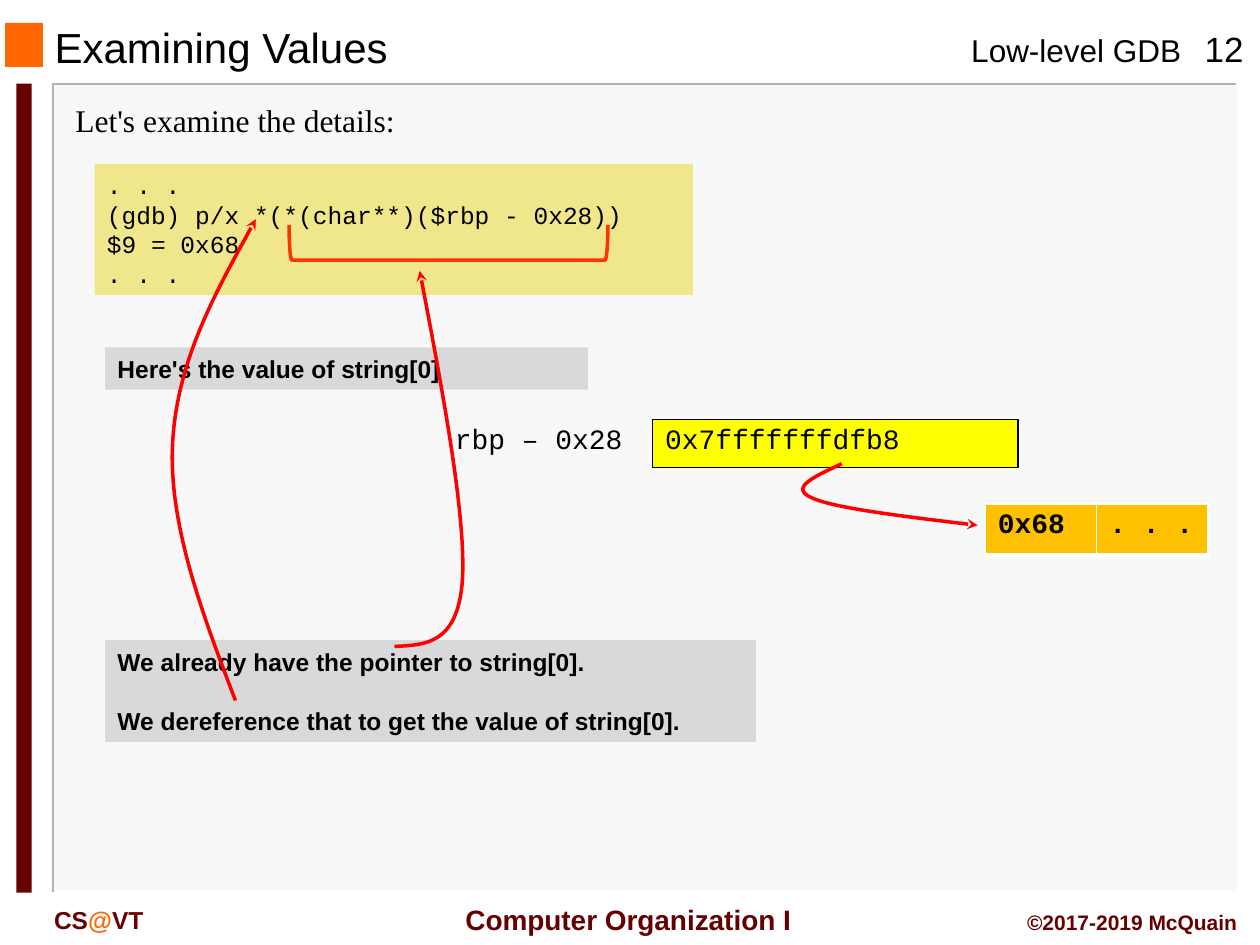
"""Build the "Examining Values" slide on reading memory with GDB."""
from lxml import etree
from pptx import Presentation
from pptx.dml.color import RGBColor
from pptx.enum.shapes import MSO_SHAPE
from pptx.enum.text import MSO_ANCHOR, PP_ALIGN
from pptx.oxml.ns import qn
from pptx.util import Pt

RECTANGLE, BRACKET = MSO_SHAPE.RECTANGLE, MSO_SHAPE.LEFT_BRACKET
TOP, MIDDLE = MSO_ANCHOR.TOP, MSO_ANCHOR.MIDDLE
LEFT, CENTER, RIGHT = PP_ALIGN.LEFT, PP_ALIGN.CENTER, PP_ALIGN.RIGHT

BLACK = RGBColor(0x00, 0x00, 0x00)
WHITE = RGBColor(0xFF, 0xFF, 0xFF)
PANEL_GRAY = RGBColor(0xF8, 0xF8, 0xF8)
EDGE_GRAY = RGBColor(0xB2, 0xB2, 0xB2)
NOTE_GRAY = RGBColor(0xD9, 0xD9, 0xD9)
ORANGE = RGBColor(0xFF, 0x66, 0x00)
MAROON = RGBColor(0x66, 0x00, 0x00)
KHAKI = RGBColor(0xF0, 0xE6, 0x8C)
YELLOW = RGBColor(0xFF, 0xFF, 0x00)
GOLD = RGBColor(0xFF, 0xC0, 0x00)
RED = RGBColor(0xFF, 0x00, 0x00)
BRACKET_RED = RGBColor(0xFF, 0x33, 0x00)

SANS, SERIF, MONO = "Arial", "Times New Roman", "Courier New"
LINE_HEIGHT = Pt(16.9)

TITLE = ("Examining Values", (24, 13, 456, 27.4))
BLOCKS = [
    ((31, 48.2, 676.8, 461.5), PANEL_GRAY),
    ((2.9, 13, 21.6, 25.2), ORANGE),
    ((9.4, 47.8, 8.64, 462.4), MAROON),
]
PANEL_EDGES = [
    ([(706.3, 48.2), (30.2, 48.2), (30.2, 509.8)], EDGE_GRAY),
    ([(707.8, 48.2), (707.8, 509.8), (31.7, 509.8)], WHITE),
]
LABELS = [
    ((547.9, 14.4, 136.1, 28.8), LEFT, TOP, [("Low-level GDB", BLACK)],
     {"size": Pt(18), "name": SANS}),
    ((250.6, 511.9, 212.4, 26.6), CENTER, MIDDLE, [(" Computer Organization I", MAROON)],
     {"size": Pt(16), "name": SANS, "bold": True}),
    ((675.4, 12.2, 48.2, 31), CENTER, TOP, [("12", BLACK)],
     {"size": Pt(20), "name": SANS}),
    ((23.8, 513.4, 108, 23.8), LEFT, TOP, [("CS", MAROON), ("@", ORANGE), ("VT", MAROON)],
     {"size": Pt(14), "name": SANS, "bold": True}),
    ((504, 516.2, 210.2, 21.6), RIGHT, TOP, [("©2017-2019 McQuain", MAROON)],
     {"size": Pt(12), "name": SANS, "bold": True}),
    ((36, 54, 666, 28.8), LEFT, TOP, [("Let's examine the details:", BLACK)],
     {"size": Pt(18), "name": SERIF}),
]
MONO_14 = {"size": Pt(14), "name": MONO}
SANS_14 = {"size": Pt(14), "name": SANS, "bold": True}
NOTES = [
    ((54, 93.6, 342, 74.9), KHAKI, MONO_14, 0,
     [". . .", "(gdb) p/x *(*(char**)($rbp - 0x28))", "$9 = 0x68", ". . ."]),
    ((60, 198.5, 276, 24.2), NOTE_GRAY, SANS_14, 0, ["Here's the value of string[0]"]),
    ((60, 365.8, 372, 58.2), NOTE_GRAY, SANS_14, LINE_HEIGHT,
     ["We already have the pointer to string[0].",
      "We dereference that to get the value of string[0]."]),
]
ALL_BLACK = dict.fromkeys("LRTB", (BLACK, 1))
ALL_WHITE = {**dict.fromkeys("LRT", (WHITE, 1)), "B": (WHITE, 3)}
MEMORY_TABLES = [
    ((252.7, 239.8), 27.4, False,
     [("rbp – 0x28", 120.2, None, {"R": (BLACK, 1)}),
      ("0x7fffffffdfb8", 208.8, YELLOW, ALL_BLACK)]),
    ((563, 288), 29.5, True,
     [("0x68", 63.7, GOLD, ALL_WHITE), (". . .", 63.7, GOLD, ALL_WHITE)]),
]
CURVES = [
    [(481, 265), (465.8, 272.2), (450.7, 278.6), (463.7, 284.4),
     (475.9, 290.2), (517, 295.2), (558.7, 300.2)],
    [(134.6, 400.3), (115.2, 349.9), (96.5, 299.5), (98.6, 254.2),
     (100.8, 208.1), (123.1, 167), (146.2, 125.3)],
    [(225.4, 369.4), (243.4, 368.6), (261.4, 367.9), (264.2, 331.9),
     (266.4, 296.6), (253.4, 225.4), (239.8, 154.8)],
]
BRACKET_BOX = (246.2, 47.5, 20.2, 182.2)


def set_values(target, values):
    for name, value in values.items():
        setattr(target, name, value)


def write(paragraph, runs, font):
    for text, color in runs:
        run = paragraph.add_run()
        run.text = text
        set_values(run.font, font)
        run.font.color.rgb = color


def add_block(slide, box, color):
    block = slide.shapes.add_shape(RECTANGLE, *map(Pt, box))
    block.shadow.inherit = False
    block.fill.solid()
    block.fill.fore_color.rgb = color
    block.line.fill.background()
    return block


def outline(shape, color, width):
    shape.shadow.inherit = False
    shape.fill.background()
    shape.line.color.rgb = color
    shape.line.width = Pt(width)


def add_polyline(slide, points, color, width):
    corners = [(Pt(x), Pt(y)) for x, y in points]
    builder = slide.shapes.build_freeform(*corners[0])
    builder.add_line_segments(corners[1:], close=False)
    polyline = builder.convert_to_shape()
    outline(polyline, color, width)
    return polyline


def add_curved_arrow(slide, points):
    arrow = add_polyline(slide, points[::3], RED, 2)
    segments = list(arrow._element.iter(qn("a:lnTo")))
    for index, segment in enumerate(segments):
        segment.tag = qn("a:cubicBezTo")
        segment.clear()
        for x, y in points[3 * index + 1:3 * index + 4]:
            etree.SubElement(segment, qn("a:pt"), x=str(Pt(x) - arrow.left),
                             y=str(Pt(y) - arrow.top))
    etree.SubElement(arrow.line._get_or_add_ln(), qn("a:tailEnd"), type="stealth")


def set_borders(cell, borders):
    properties = cell._tc.get_or_add_tcPr()
    for side in "LRTB":
        color, width = borders.get(side, (None, 0))
        edge = etree.SubElement(properties, qn(f"a:ln{side}"), w=str(Pt(width)))
        if color is None:
            etree.SubElement(edge, qn("a:noFill"))
        else:
            fill = etree.SubElement(edge, qn("a:solidFill"))
            etree.SubElement(fill, qn("a:srgbClr"), val=str(color))


def add_memory_table(slide, corner, height, bold, cells):
    width = sum(cell[1] for cell in cells)
    table = slide.shapes.add_table(1, len(cells), *map(Pt, (*corner, width, height))).table
    table.first_row = table.horz_banding = False
    for index, (text, column_width, color, borders) in enumerate(cells):
        table.columns[index].width = Pt(column_width)
        cell = table.cell(0, index)
        set_borders(cell, borders)
        if color is None:
            cell.fill.background()
        else:
            cell.fill.solid()
            cell.fill.fore_color.rgb = color
        write(cell.text_frame.paragraphs[0], [(text, BLACK)],
              {"size": Pt(16), "name": MONO, "bold": bold})


def add_note(slide, box, color, font, gap, lines):
    frame = add_block(slide, box, color).text_frame
    set_values(frame, {"word_wrap": True, "vertical_anchor": TOP})
    for index, line in enumerate(lines):
        paragraph = frame.add_paragraph() if index else frame.paragraphs[0]
        set_values(paragraph, {"alignment": LEFT, "line_spacing": LINE_HEIGHT,
                               "space_before": gap if index else 0})
        write(paragraph, [(line, BLACK)], font)


def add_label(slide, box, alignment, anchor, runs, font):
    frame = slide.shapes.add_textbox(*map(Pt, box)).text_frame
    set_values(frame, {"word_wrap": True, "vertical_anchor": anchor})
    frame.paragraphs[0].alignment = alignment
    write(frame.paragraphs[0], runs, font)


def main():
    deck = Presentation()
    set_values(deck, {"slide_width": Pt(720), "slide_height": Pt(540)})
    slide = deck.slides.add_slide(deck.slide_layouts[5])
    heading, heading_box = TITLE
    title = slide.shapes.title
    set_values(title, dict(zip(("left", "top", "width", "height"), map(Pt, heading_box))))
    title.text_frame.vertical_anchor = MIDDLE
    title.text_frame.paragraphs[0].alignment = LEFT
    write(title.text_frame.paragraphs[0], [(heading, BLACK)], {"size": Pt(24), "name": SANS})
    for block in BLOCKS:
        add_block(slide, *block)
    for points, color in PANEL_EDGES:
        add_polyline(slide, points, color, 1)
    for label in LABELS:
        add_label(slide, *label)
    for memory in MEMORY_TABLES:
        add_memory_table(slide, *memory)
    for note in NOTES:
        add_note(slide, *note)
    for curve in CURVES:
        add_curved_arrow(slide, curve)
    bracket = slide.shapes.add_shape(BRACKET, *map(Pt, BRACKET_BOX))
    bracket.rotation = 270
    outline(bracket, BRACKET_RED, 2)
    deck.save("out.pptx")


if __name__ == "__main__":
    main()
